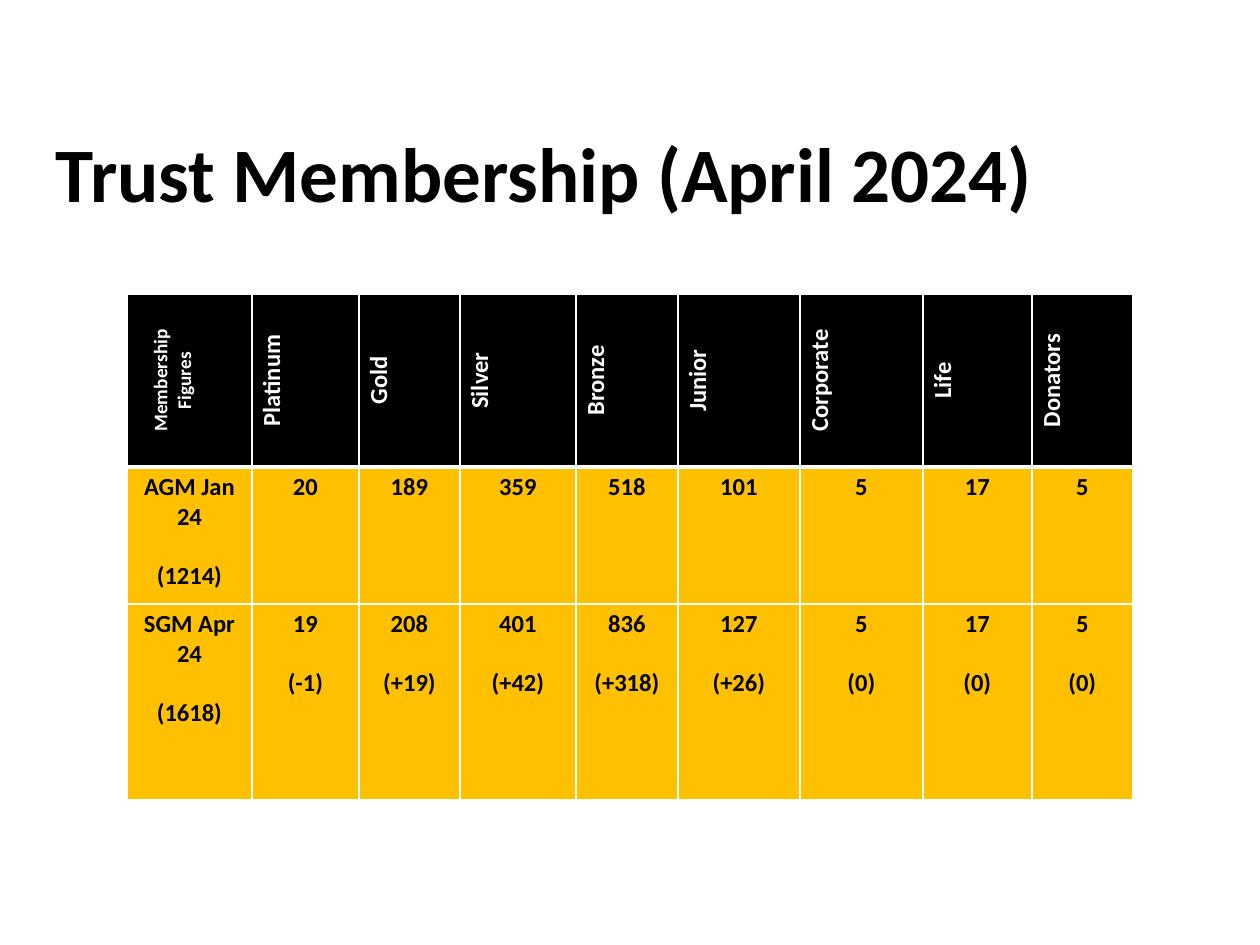
from lxml.etree import SubElement
from pptx import Presentation
from pptx.dml.color import RGBColor
from pptx.enum.text import PP_ALIGN
from pptx.oxml.ns import qn
from pptx.util import Emu, Pt

PX = 914400 / 126
FONT = "Calibri"
COLORS = {"black": "000000", "white": "FFFFFF", "gold": "FFC000"}

TITLE = "Trust Membership (April 2024)"
HEADERS = ["Membership\nFigures", "Platinum", "Gold", "Silver", "Bronze",
           "Junior", "Corporate", "Life", "Donators"]
# Each cell lists its paragraphs.
FIGURES = [
    [("AGM Jan 24", "(1214)"), ("20",), ("189",), ("359",), ("518",),
     ("101",), ("5",), ("17",), ("5",)],
    [("SGM Apr 24", "(1618)"), ("19", "(-1)"), ("208", "(+19)"),
     ("401", "(+42)"), ("836", "(+318)"), ("127", "(+26)"), ("5", "(0)"),
     ("17", "(0)"), ("5", "(0)")],
]
TABLE_LEFT, TABLE_TOP = 127, 294
COLUMN_WIDTHS = [125, 107, 101, 116, 102, 122, 123, 109, 101]
ROW_HEIGHTS = [173, 137, 196]
MARGIN_X, MARGIN_Y = 9, 5
FIRST_HEADER_INDENT = 17


def px(value):
    return Emu(round(value * PX))


def color(name):
    return RGBColor.from_string(COLORS[name])


def add_text(paragraph, text, size, color_name):
    for index, line in enumerate(text.split("\n")):
        if index:
            paragraph.add_line_break()
        run = paragraph.add_run()
        run.text = line
        run.font.name = FONT
        run.font.size = Pt(size)
        run.font.bold = True
        run.font.color.rgb = color(color_name)


def set_borders(cell, top, bottom):
    """Draw white cell borders; top and bottom are widths in points."""
    properties = cell._tc.get_or_add_tcPr()
    for side, width in (("L", 1), ("R", 1), ("T", top), ("B", bottom)):
        line = SubElement(properties, qn(f"a:ln{side}"), w=str(Pt(width)))
        fill = SubElement(line, qn("a:solidFill"))
        SubElement(fill, qn("a:srgbClr"), val=COLORS["white"])


def fill_cell(cell, lines, size, text_color, fill_color, top=1, bottom=1):
    set_borders(cell, top, bottom)
    cell.fill.solid()
    cell.fill.fore_color.rgb = color(fill_color)
    cell.margin_left = cell.margin_right = px(MARGIN_X)
    cell.margin_top = cell.margin_bottom = px(MARGIN_Y)
    frame = cell.text_frame
    for index, text in enumerate(lines):
        paragraph = frame.paragraphs[0] if index == 0 else frame.add_paragraph()
        paragraph.alignment = PP_ALIGN.CENTER
        if index:
            paragraph.space_before = Pt(17)
        add_text(paragraph, text, size, text_color)


def add_title(slide):
    box = slide.shapes.add_textbox(px(56), px(126), px(1086), px(116))
    frame = box.text_frame
    frame.word_wrap = True
    frame.margin_left = frame.margin_right = 0
    frame.margin_top = frame.margin_bottom = 0
    add_text(frame.paragraphs[0], TITLE, 44, "black")


def add_membership_table(slide):
    table = slide.shapes.add_table(
        len(ROW_HEIGHTS), len(COLUMN_WIDTHS), px(TABLE_LEFT), px(TABLE_TOP),
        px(sum(COLUMN_WIDTHS)), px(sum(ROW_HEIGHTS))).table
    for column, width in zip(table.columns, COLUMN_WIDTHS):
        column.width = px(width)
    for row, height in zip(table.rows, ROW_HEIGHTS):
        row.height = px(height)

    for column, name in enumerate(HEADERS):
        cell = table.cell(0, column)
        fill_cell(cell, [name], 14 if column else 11, "white", "black", bottom=3)
        cell._tc.tcPr.set("vert", "vert270")
    table.cell(0, 0).margin_top = px(MARGIN_Y + FIRST_HEADER_INDENT)

    for row, figures in enumerate(FIGURES, start=1):
        for column, lines in enumerate(figures):
            fill_cell(table.cell(row, column), lines, 14, "black", "gold",
                      top=3 if row == 1 else 1)


def main():
    presentation = Presentation()
    presentation.slide_width, presentation.slide_height = px(1260), px(945)
    slide = presentation.slides.add_slide(presentation.slide_layouts[6])
    add_title(slide)
    add_membership_table(slide)
    presentation.save("out.pptx")


if __name__ == "__main__":
    main()
